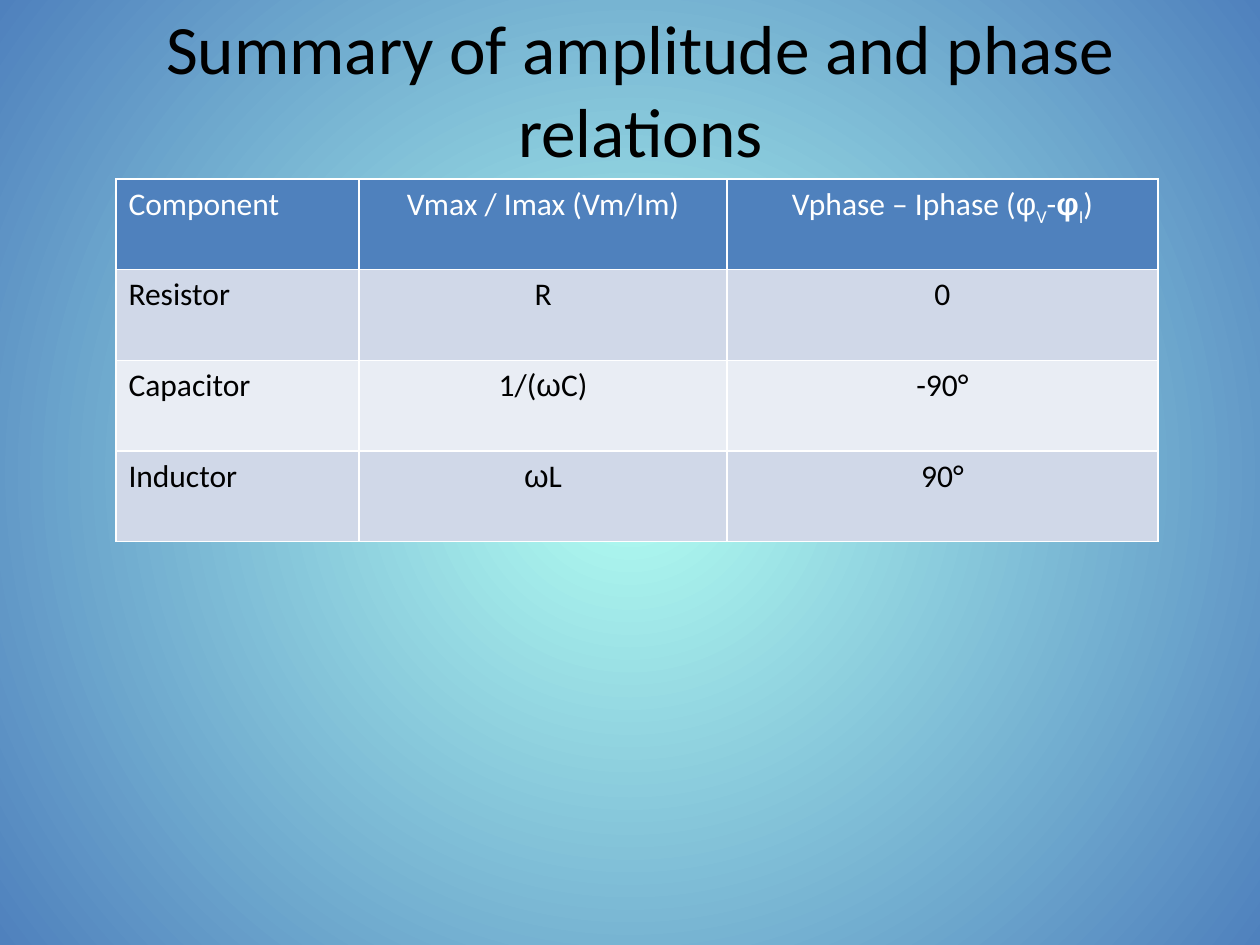
"""Build a slide that tabulates amplitude and phase relations of circuit components."""
from lxml import etree
from pptx import Presentation
from pptx.dml.color import RGBColor
from pptx.enum.text import MSO_ANCHOR, MSO_AUTO_SIZE, PP_ALIGN
from pptx.oxml.ns import qn
from pptx.util import Inches, Pt

LEFT, CENTER = PP_ALIGN.LEFT, PP_ALIGN.CENTER
MIDDLE = MSO_ANCHOR.MIDDLE
NO_AUTOFIT = MSO_AUTO_SIZE.NONE

COLORS = {
    "glow": "B3FFF2",
    "edge": "4F81BD",
    "header": "4F81BD",
    "odd_row": "D0D8E8",
    "even_row": "E9EDF4",
    "header_text": "FFFFFF",
    "text": "000000",
}
GREEK = {"name": "Arial"}
BOLD_GREEK = {"name": "Arial", "bold": True}
SUBSCRIPT = {"baseline": "-25000"}

TITLE = "Summary of amplitude and phase relations"
TITLE_BOX = (0.75, 0.4, 8.67, 0.6)
TITLE_SIZE = 39.6
TABLE_ORIGIN = (0.92, 1.42)
COLUMN_WIDTHS = (1.93, 2.92, 3.42)
ROW_HEIGHT = 0.72
TABLE_SIZE = 18
ROWS = [
    ["Component", "Vmax / Imax (Vm/Im)",
     ["Vphase – Iphase (", ("φ", GREEK), ("V", SUBSCRIPT), "-",
      ("φ", BOLD_GREEK), ("I", SUBSCRIPT), ")"]],
    ["Resistor", "R", "0"],
    ["Capacitor", ["1/(", ("ω", GREEK), "C)"], "-90°"],
    ["Inductor", [("ω", GREEK), "L"], "90°"],
]


def rgb(name):
    return RGBColor.from_string(COLORS[name])


def add_run(paragraph, text, size, color, style):
    run = paragraph.add_run()
    run.text = text
    run.font.color.rgb = rgb(color)
    values = {"name": "Calibri", "bold": False, "size": Pt(size), **style}
    baseline = values.pop("baseline", None)
    for attribute, value in values.items():
        setattr(run.font, attribute, value)
    if baseline:
        run.font._element.set("baseline", baseline)


def paint_background(slide):
    fill = slide.background.fill
    fill.gradient()
    for stop, color, position in zip(fill.gradient_stops, ("glow", "edge"), (0, 1)):
        stop.color.rgb = rgb(color)
        stop.position = position
    gradient = slide.element.find(".//" + qn("a:gradFill"))
    gradient.remove(gradient.find(qn("a:lin")))
    circle = etree.SubElement(gradient, qn("a:path"), {"path": "circle"})
    etree.SubElement(circle, qn("a:fillToRect"), dict.fromkeys("ltrb", "50000"))


def add_title(slide):
    title = slide.shapes.title
    title.left, title.top, title.width, title.height = map(Inches, TITLE_BOX)
    frame = title.text_frame
    for attribute, value in {"word_wrap": True, "auto_size": NO_AUTOFIT,
                             "vertical_anchor": MIDDLE}.items():
        setattr(frame, attribute, value)
    paragraph = frame.paragraphs[0]
    paragraph.alignment = CENTER
    add_run(paragraph, TITLE, TITLE_SIZE, "text", {})


def add_relations_table(slide):
    size = (sum(COLUMN_WIDTHS), ROW_HEIGHT * len(ROWS))
    table = slide.shapes.add_table(
        len(ROWS), len(COLUMN_WIDTHS), *map(Inches, TABLE_ORIGIN + size)).table
    for column, width in zip(table.columns, COLUMN_WIDTHS):
        column.width = Inches(width)
    for row_index, row in enumerate(ROWS):
        band = "odd_row" if row_index % 2 else "even_row"
        fill, color = (band, "text") if row_index else ("header", "header_text")
        for column_index, content in enumerate(row):
            cell = table.cell(row_index, column_index)
            cell.fill.solid()
            cell.fill.fore_color.rgb = rgb(fill)
            paragraph = cell.text_frame.paragraphs[0]
            paragraph.alignment = CENTER if column_index else LEFT
            for part in [content] if isinstance(content, str) else content:
                text, style = (part, {}) if isinstance(part, str) else part
                add_run(paragraph, text, TABLE_SIZE, color, style)


def main():
    presentation = Presentation()
    presentation.slide_width, presentation.slide_height = Inches(10), Inches(7.5)
    slide = presentation.slides.add_slide(presentation.slide_layouts[5])
    paint_background(slide)
    add_title(slide)
    add_relations_table(slide)
    presentation.save("out.pptx")


if __name__ == "__main__":
    main()
